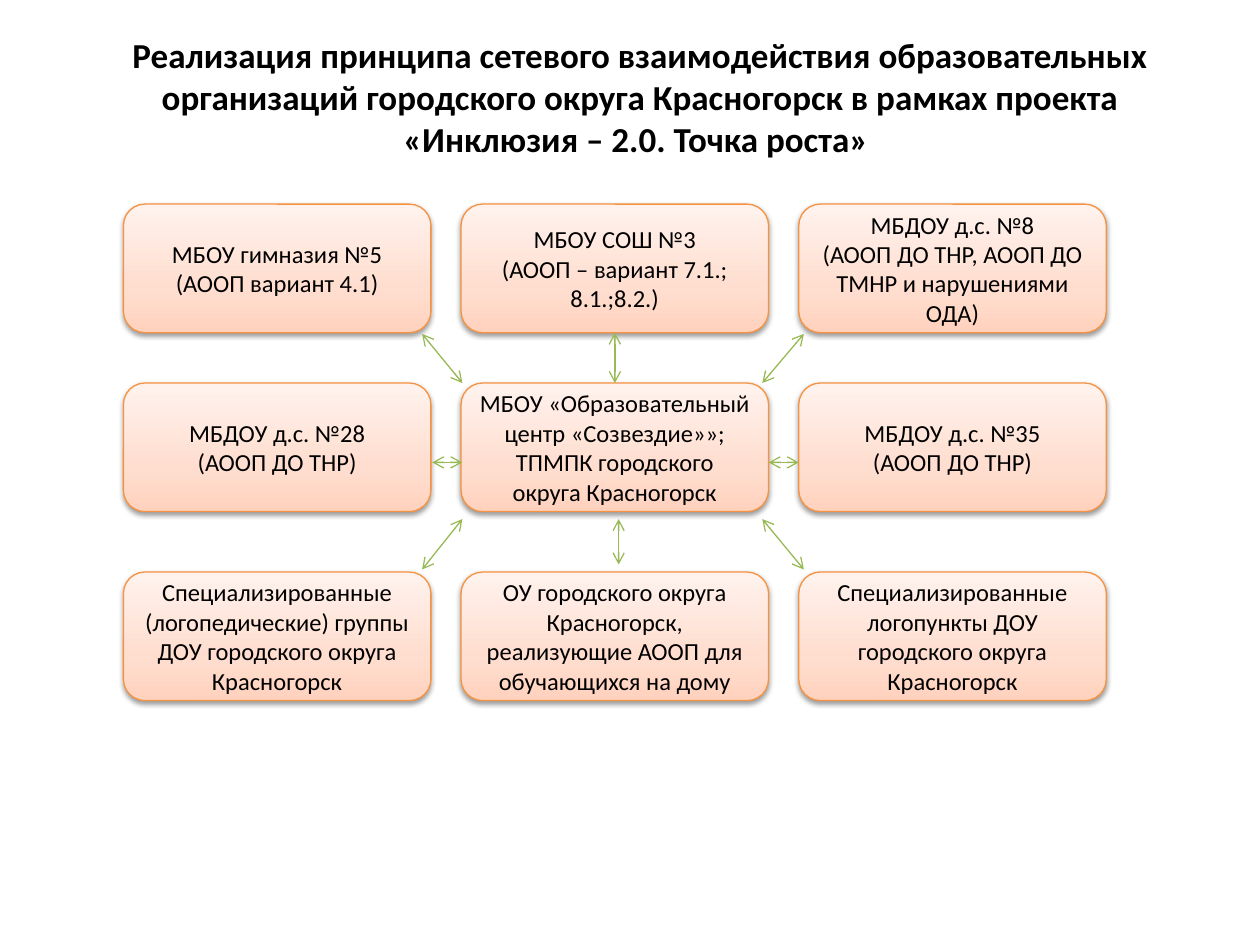
from lxml.etree import SubElement
from pptx import Presentation
from pptx.dml.color import RGBColor
from pptx.enum.shapes import MSO_CONNECTOR as Connector, MSO_SHAPE as Shape
from pptx.enum.text import MSO_ANCHOR as Anchor, MSO_AUTO_SIZE as AutoSize, PP_ALIGN as Align
from pptx.oxml import parse_xml
from pptx.oxml.ns import nsdecls, qn
from pptx.util import Inches, Pt

COLORS = {
    "text": "000000", "border": "F69240", "arrow": "98B955", "shadow": "000000",
    "deep": "FFD2BD", "middle": "FFDED0", "pale": "FFF2ED",
}
GRADIENT = [(0, "deep"), (35, "middle"), (100, "pale")]

# Grid of boxes, in inches
LEFT, COLUMN_STEP = 0.98, 2.68
ROW_TOPS = [1.62, 3.04, 4.54]
BOX_WIDTH, BOX_HEIGHT = 2.44, 1.02

TITLE = ("Реализация принципа сетевого взаимодействия образовательных организаций "
         "городского округа Красногорск в рамках проекта «Инклюзия – 2.0. Точка роста» ")
BOXES = [
    [["МБОУ гимназия №5", "(АООП вариант 4.1)"],
     ["МБОУ СОШ №3", "(АООП – вариант 7.1.; 8.1.;8.2.)"],
     ["МБДОУ д.с. №8", "(АООП ДО ТНР, АООП ДО ТМНР и нарушениями ОДА)"]],
    [["МБДОУ д.с. №28", "(АООП ДО ТНР)"],
     ["МБОУ «Образовательный центр «Созвездие»»; ТПМПК городского округа Красногорск"],
     ["МБДОУ д.с. №35", "(АООП ДО ТНР)"]],
    [["Специализированные (логопедические) группы ДОУ городского округа Красногорск"],
     ["ОУ городского округа Красногорск, реализующие АООП для обучающихся на дому"],
     ["Специализированные логопункты ДОУ городского округа Красногорск"]],
]


def color(name):
    return RGBColor.from_string(COLORS[name])


class SchemeSlide:
    font = "Calibri"
    line_width = Pt(0.75)

    def __init__(self, slide):
        self.slide = slide

    def set_text(self, frame, lines, size, bold=False):
        frame.word_wrap = True
        frame.auto_size = AutoSize.NONE
        frame.vertical_anchor = Anchor.MIDDLE
        frame.text = "\n".join(lines)
        for paragraph in frame.paragraphs:
            paragraph.alignment = Align.CENTER
            font = paragraph.font
            font.name, font.size, font.bold = self.font, Pt(size), bold
            font.color.rgb = color("text")

    def title(self, text, left, top, width, height):
        title = self.slide.shapes.title
        title.left, title.top = Inches(left), Inches(top)
        title.width, title.height = Inches(width), Inches(height)
        self.set_text(title.text_frame, [text], 20, bold=True)

    def box(self, column, row, lines):
        shape = self.slide.shapes.add_shape(
            Shape.FLOWCHART_ALTERNATE_PROCESS,
            Inches(LEFT + column * COLUMN_STEP), Inches(ROW_TOPS[row]),
            Inches(BOX_WIDTH), Inches(BOX_HEIGHT))
        shape.line.color.rgb = color("border")
        shape.line.width = self.line_width
        self.shade(shape)
        self.set_text(shape.text_frame, lines, 14)
        return shape

    def shade(self, shape):
        # Three-stop gradient from the bottom up
        shape.fill.gradient()
        shape.fill.gradient_angle = 90
        properties = shape._element.spPr
        stops = properties.find(".//" + qn("a:gsLst"))
        for stop in list(stops):
            stops.remove(stop)
        for percent, name in GRADIENT:
            stop = SubElement(stops, qn("a:gs"), pos=str(percent * 1000))
            SubElement(stop, qn("a:srgbClr"), val=COLORS[name])
        # Soft shadow below
        shape.shadow.inherit = False
        properties.find(qn("a:effectLst")).append(parse_xml(
            f'<a:outerShdw {nsdecls("a")} blurRad="{Pt(3.1)}" dist="{Pt(1.6)}" '
            f'dir="5400000" rotWithShape="0"><a:srgbClr val="{COLORS["shadow"]}">'
            '<a:alpha val="38000"/></a:srgbClr></a:outerShdw>'))

    def arrow(self, x1, y1, x2, y2):
        connector = self.slide.shapes.add_connector(
            Connector.STRAIGHT, Inches(x1), Inches(y1), Inches(x2), Inches(y2))
        connector.line.color.rgb = color("arrow")
        connector.line.width = self.line_width
        properties = connector._element.spPr
        line = properties.find(qn("a:ln"))
        for end in ("a:headEnd", "a:tailEnd"):
            SubElement(line, qn(end), type="arrow")
        SubElement(properties, qn("a:effectLst"))
        return connector


def main():
    presentation = Presentation()
    presentation.slide_width, presentation.slide_height = Inches(10), Inches(7.5)
    slide = presentation.slides.add_slide(presentation.slide_layouts[0])
    subtitle = slide.placeholders[1]._element
    subtitle.getparent().remove(subtitle)
    scheme = SchemeSlide(slide)

    scheme.title(TITLE, 0.83, 0.29, 8.5, 0.95)

    # Organisations around the centre
    boxes = [[scheme.box(column, row, lines) for column, lines in enumerate(line)]
             for row, line in enumerate(BOXES)]

    # Diagonal and side arrows, left then right
    for inner, outer, side_start, side_end in ((3.67, 3.35, 3.67, 3.43),
                                               (6.05, 6.38, 6.10, 6.34)):
        scheme.arrow(inner, 3.04, outer, 2.65)
        scheme.arrow(inner, 4.12, outer, 4.52)
        scheme.arrow(side_start, 3.67, side_end, 3.67)

    # Vertical arrows
    upward = scheme.arrow(4.88, 3.04, 4.88, 2.64)
    upward.begin_connect(boxes[1][1], 0)
    upward.end_connect(boxes[0][1], 2)
    scheme.arrow(4.91, 4.48, 4.91, 4.12)

    presentation.save("out.pptx")


if __name__ == "__main__":
    main()
